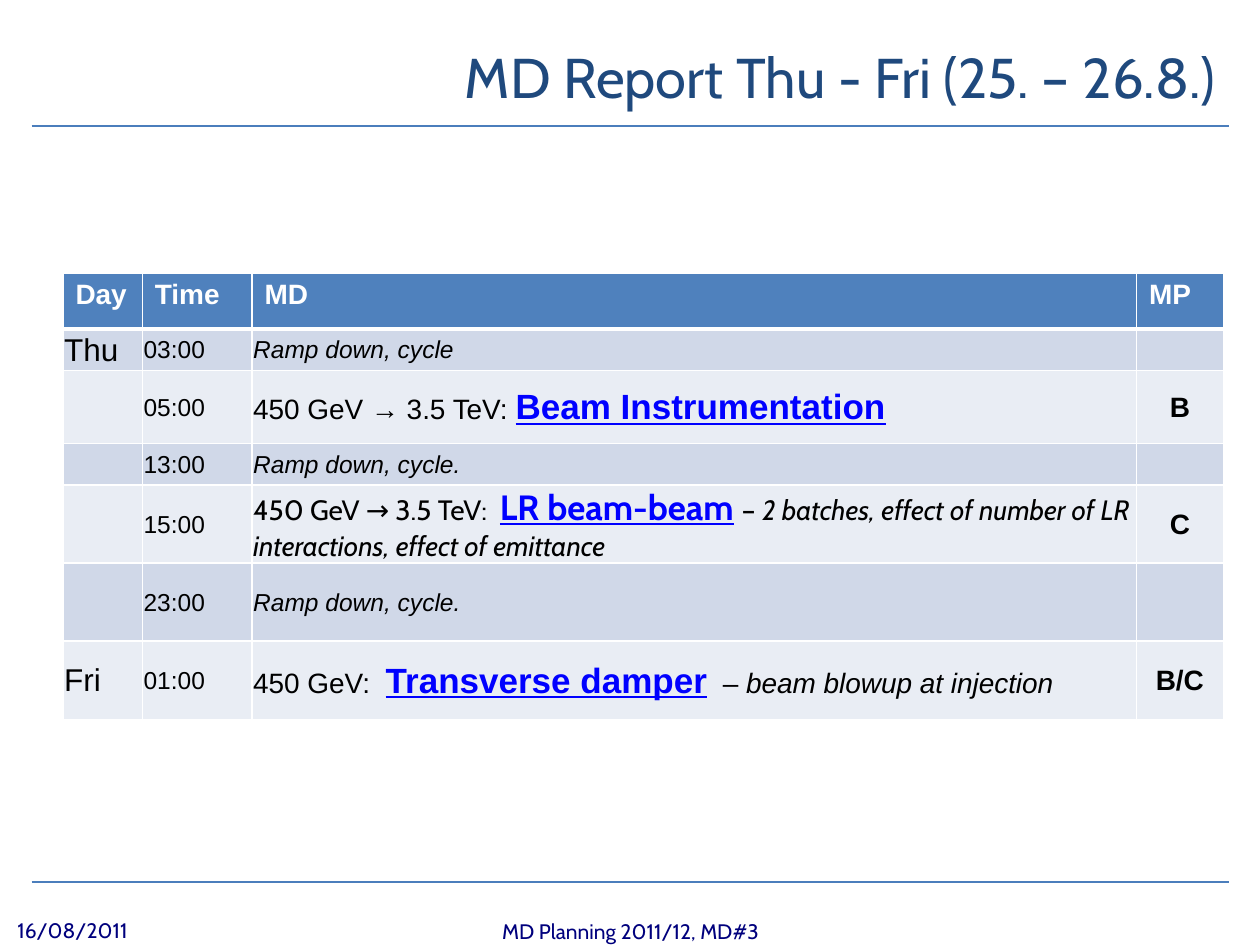
from lxml.etree import SubElement
from pptx import Presentation
from pptx.dml.color import RGBColor
from pptx.enum.shapes import MSO_CONNECTOR
from pptx.enum.text import MSO_ANCHOR, PP_ALIGN
from pptx.oxml.ns import qn
from pptx.util import Inches, Pt

WHITE = RGBColor(0xFF, 0xFF, 0xFF)
BLACK = RGBColor(0, 0, 0)
RULE_BLUE = RGBColor(0x4B, 0x7E, 0xBC)
TITLE_BLUE = RGBColor(0x1F, 0x49, 0x7D)
FOOTER_BLUE = RGBColor(0, 0, 0x7D)
LINK_BLUE = RGBColor(0, 0, 0xFF)
HEADER_FILL = RGBColor(0x4F, 0x81, 0xBD)
BAND_FILLS = [RGBColor(0xD0, 0xD8, 0xE8), RGBColor(0xE9, 0xED, 0xF4)]

BASE = {"name": "Arial", "size": Pt(16), "bold": False, "italic": False}
STYLES = {
    "header": {"bold": True},
    "day": {"size": Pt(18)},
    "time": {"size": Pt(14)},
    "pause": {"size": Pt(14), "italic": True},
    "plain": {},
    "note": {"italic": True},
    "topic": {"size": Pt(20), "bold": True, "underline": True},
    "level": {"bold": True},
    "cabin plain": {"name": "Cabin"},
    "cabin note": {"name": "Cabin", "italic": True},
    "cabin topic": {"name": "Cabin", "size": Pt(20), "bold": True, "underline": True},
    "cabin gap": {"name": "Cabin", "size": Pt(20), "bold": True},
    "title": {"name": "Cabin", "size": Pt(32)},
    "footer": {"name": "Cabin", "size": Pt(12)},
}
COLORS = {"header": WHITE, "topic": LINK_BLUE, "cabin topic": LINK_BLUE,
          "title": TITLE_BLUE, "footer": FOOTER_BLUE}

HEADINGS = ["Day", "Time", "MD", "MP"]
SCHEDULE = [
    ("Thu", "03:00", [("Ramp down, cycle", "pause")], ""),
    ("", "05:00", [("450 GeV → 3.5 TeV: ", "plain"),
                   ("Beam Instrumentation", "topic")], "B"),
    ("", "13:00", [("Ramp down, cycle.", "pause")], ""),
    ("", "15:00", [("450 GeV → 3.5 TeV:  ", "cabin plain"),
                   ("LR beam-beam", "cabin topic"),
                   (" ", "cabin gap"),
                   ("– ", "cabin plain"),
                   ("2 batches, effect of number of LR interactions, "
                    "effect of emittance", "cabin note")], "C"),
    ("", "23:00", [("Ramp down, cycle.", "pause")], ""),
    ("Fri", "01:00", [("450 GeV:  ", "plain"),
                      ("Transverse damper", "topic"),
                      ("  – ", "plain"),
                      ("beam blowup at injection", "note")], "B/C"),
]
COLUMN_WIDTHS = [0.63, 0.87, 7.02, 0.69]
ROW_HEIGHTS = [0.44, 0.33, 0.58, 0.33, 0.62, 0.62, 0.62]
TEXT_BOXES = [
    ((1.08, 0.17, 8.67, 0.87), "MD Report Thu - Fri (25. – 26.8.)", "title", PP_ALIGN.RIGHT),
    ((3.42, 7.25, 3.17, 0.28), "MD Planning 2011/12, MD#3", "footer", PP_ALIGN.CENTER),
    ((0.04, 7.24, 2.33, 0.29), "16/08/2011", "footer", PP_ALIGN.LEFT),
]


def write(paragraph, runs, alignment=PP_ALIGN.LEFT):
    paragraph.alignment = alignment
    for text, style in runs:
        if not text:
            continue
        run = paragraph.add_run()
        run.text = text
        for attribute, value in (BASE | STYLES[style]).items():
            setattr(run.font, attribute, value)
        run.font.color.rgb = COLORS.get(style, BLACK)


def set_borders(cell, widths):
    properties = cell._tc.get_or_add_tcPr()
    for side, width in widths.items():
        line = SubElement(properties, qn(f"a:ln{side}"), w=str(Pt(width)))
        fill = SubElement(line, qn("a:solidFill"))
        SubElement(fill, qn("a:srgbClr"), val=str(WHITE))


def add_rule(slide, top):
    rule = slide.shapes.add_connector(
        MSO_CONNECTOR.STRAIGHT, Inches(0.25), Inches(top), Inches(9.75), Inches(top))
    rule.line.color.rgb = RULE_BLUE
    rule.line.width = Pt(1.5)
    SubElement(rule._element.spPr, qn("a:effectLst"))


def add_text(slide, box, text, style, alignment):
    frame = slide.shapes.add_textbox(*map(Inches, box)).text_frame
    frame.word_wrap = True
    frame.vertical_anchor = MSO_ANCHOR.MIDDLE
    write(frame.paragraphs[0], [(text, style)], alignment)


def add_schedule(slide):
    rows = [[[(heading, "header")] for heading in HEADINGS]]
    for day, time, activity, level in SCHEDULE:
        rows.append([[(day, "day")], [(time, "time")], activity, [(level, "level")]])
    table = slide.shapes.add_table(
        len(rows), len(HEADINGS), Inches(0.5), Inches(2.17),
        Inches(sum(COLUMN_WIDTHS)), Inches(sum(ROW_HEIGHTS))).table
    for column, width in zip(table.columns, COLUMN_WIDTHS):
        column.width = Inches(width)
    for row, height in zip(table.rows, ROW_HEIGHTS):
        row.height = Inches(height)
    body_format = {"margin_left": Inches(0.01), "margin_right": Inches(0.01),
                   "margin_top": Inches(0.01), "margin_bottom": 0,
                   "vertical_anchor": MSO_ANCHOR.MIDDLE}
    for row_index, row in enumerate(rows):
        is_header = row_index == 0
        for column_index, runs in enumerate(row):
            cell = table.cell(row_index, column_index)
            set_borders(cell, {"L": 1, "R": 1, "T": 3 if row_index == 1 else 1,
                               "B": 3 if is_header else 1})
            cell.fill.solid()
            cell.fill.fore_color.rgb = (
                HEADER_FILL if is_header else BAND_FILLS[(row_index - 1) % 2])
            if not is_header:
                for attribute, value in body_format.items():
                    setattr(cell, attribute, value)
            centered = column_index == 3 and not is_header
            write(cell.text_frame.paragraphs[0], runs,
                  PP_ALIGN.CENTER if centered else PP_ALIGN.LEFT)


def main():
    presentation = Presentation()
    presentation.slide_width = Inches(10)
    presentation.slide_height = Inches(7.5)
    slide = presentation.slides.add_slide(presentation.slide_layouts[6])
    for top in (1, 7):
        add_rule(slide, top)
    add_schedule(slide)
    for text_box in TEXT_BOXES:
        add_text(slide, *text_box)
    presentation.save("out.pptx")


if __name__ == "__main__":
    main()
